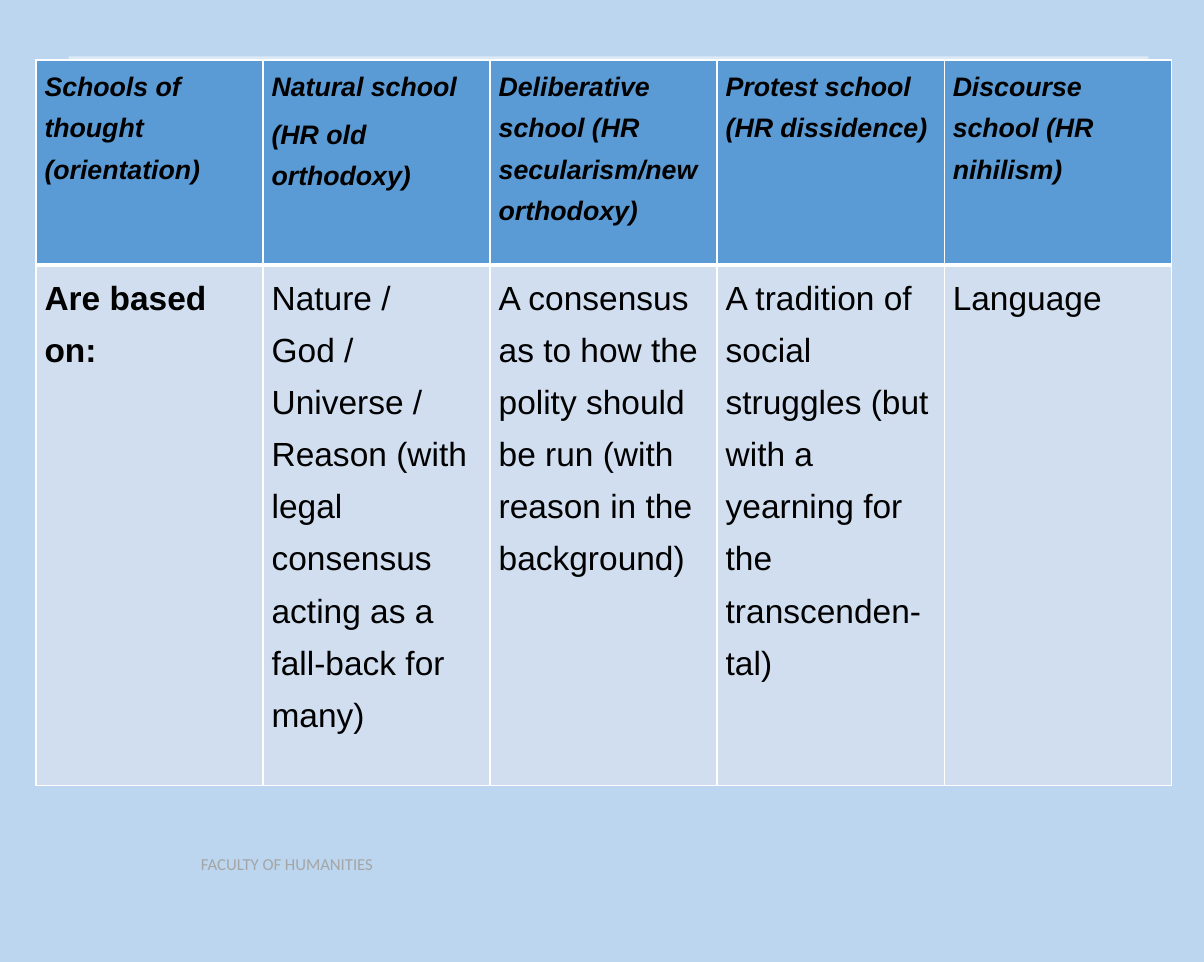
import pptx
import pptx.util
import pptx.dml.color
import pptx.enum.shapes
import pptx.enum.text
import pptx.oxml
import pptx.oxml.ns
from pptx.util import Cm

SCHOOLS = [
    (["Schools of thought (orientation)"], "Are based on:"),
    (["Natural school", "(HR old orthodoxy)"],
     "Nature / God / Universe / Reason (with legal consensus acting as a fall-back for many)"),
    (["Deliberative school (HR secularism/new orthodoxy)"],
     "A consensus as to how the polity should be run (with reason in the background)"),
    (["Protest school (HR dissidence)"],
     "A tradition of social struggles (but with a yearning for the transcenden-tal)"),
    (["Discourse school (HR nihilism)"], "Language"),
]
HEADER_HEIGHT = 4.32


def colour(value):
    return pptx.dml.color.RGBColor.from_string(value)


def paint(target, value):
    target.fill.solid()
    target.fill.fore_color.rgb = colour(value)


def add_span(para, text, size, shade, face="Arial", bold=False, italic=False):
    span = para.add_run()
    span.text = text
    span.font.name = face
    span.font.size = pptx.util.Pt(size)
    span.font.color.rgb = colour(shade)
    span.font.bold = bold
    span.font.italic = italic


def set_borders(cell, **widths):
    properties = cell._tc.get_or_add_tcPr()
    for index, side in enumerate(("L", "R", "T", "B")):
        width = pptx.util.Pt(widths.get(side, 1))
        line = pptx.oxml.parse_xml(
            f'<a:ln{side} {pptx.oxml.ns.nsdecls("a")} w="{width}">'
            f'<a:solidFill><a:srgbClr val="FFFFFF"/></a:solidFill></a:ln{side}>')
        properties.insert(index, line)


def fill_cell(cell, lines, size, shade, bold, italic):
    paint(cell, shade)
    cell.margin_left = cell.margin_right = Cm(0.18)
    cell.margin_top = cell.margin_bottom = 0
    for index, text in enumerate(lines):
        para = cell.text_frame.add_paragraph() if index else cell.text_frame.paragraphs[0]
        para.line_spacing = 1.4
        para.space_before = pptx.util.Pt(2 if index else 0)
        para.space_after = pptx.util.Pt(2)
        add_span(para, text, size, "000000", bold=bold, italic=italic)


def add_panel(page, left, top, width, height):
    panel = page.shapes.add_shape(
        pptx.enum.shapes.MSO_SHAPE.RECTANGLE, Cm(left), Cm(top), Cm(width), Cm(height))
    panel.shadow.inherit = False
    paint(panel, "DDEAF6")
    panel.line.fill.background()


def add_schools_table(page, left, top, width, height):
    table = page.shapes.add_table(
        2, len(SCHOOLS), Cm(left), Cm(top), Cm(width), Cm(height)).table
    table.rows[0].height = Cm(HEADER_HEIGHT)
    table.rows[1].height = Cm(height - HEADER_HEIGHT)
    for index, (heading, basis) in enumerate(SCHOOLS):
        table.columns[index].width = Cm(width / len(SCHOOLS))
        header, body = table.cell(0, index), table.cell(1, index)
        fill_cell(header, heading, 16, "5B9BD5", True, True)
        fill_cell(body, [basis], 20, "D0DEEF", index == 0, False)
        set_borders(header, B=3)
        set_borders(body, T=3)


def add_footer(page, left, top, width, height):
    box = page.shapes.add_textbox(Cm(left), Cm(top), Cm(width), Cm(height))
    box.text_frame.word_wrap = True
    box.text_frame.vertical_anchor = pptx.enum.text.MSO_ANCHOR.MIDDLE
    add_span(box.text_frame.paragraphs[0], "FACULTY OF HUMANITIES", 10, "A5A5A5", "Calibri")


def main():
    deck = pptx.Presentation()
    deck.slide_width, deck.slide_height = Cm(25.4), Cm(20.3)
    page = deck.slides.add_slide(deck.slide_layouts[6])
    paint(page.background, "BBD6EE")
    add_footer(page, 3.99, 17.88, 10.77, 0.69)
    add_panel(page, 1.45, 1.19, 22.78, 15.39)
    add_schools_table(page, 0.76, 1.27, 23.95, 15.3)
    deck.save("out.pptx")


if __name__ == "__main__":
    main()
